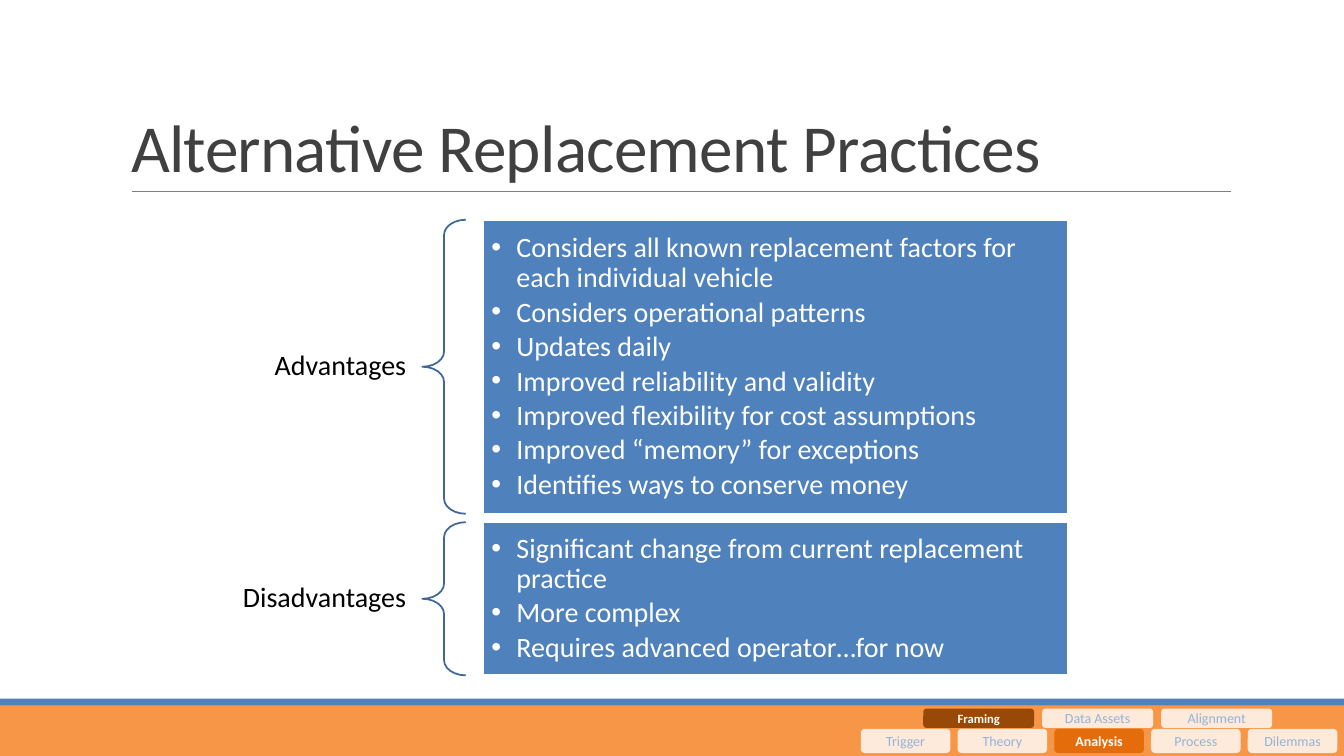
from lxml import etree
from pptx import Presentation
from pptx.dml.color import RGBColor
from pptx.enum.shapes import MSO_CONNECTOR, MSO_SHAPE
from pptx.enum.text import MSO_ANCHOR, MSO_AUTO_SIZE, PP_ALIGN
from pptx.oxml.ns import qn
from pptx.util import Pt

RECT, ROUND, BRACE = MSO_SHAPE.RECTANGLE, MSO_SHAPE.ROUNDED_RECTANGLE, MSO_SHAPE.LEFT_BRACE
LEFT, CENTER, RIGHT = PP_ALIGN.LEFT, PP_ALIGN.CENTER, PP_ALIGN.RIGHT
MIDDLE, BOTTOM = MSO_ANCHOR.MIDDLE, MSO_ANCHOR.BOTTOM
NO_FIT = MSO_AUTO_SIZE.NONE
STRAIGHT = MSO_CONNECTOR.STRAIGHT

BLUE, WHITE, BLACK = "4F81BD", "FFFFFF", "000000"
PALE, FADED = "FDEADA", "95B3D7"

PANELS = [
    ("Advantages", 157, 210, [
        "Considers all known replacement factors for each individual vehicle",
        "Considers operational patterns",
        "Updates daily",
        "Improved reliability and validity",
        "Improved flexibility for cost assumptions",
        "Improved “memory” for exceptions",
        "Identifies ways to conserve money",
    ]),
    ("Disadvantages", 373, 109.4, [
        "Significant change from current replacement practice",
        "More complex",
        "Requires advanced operator…for now",
    ]),
]
# names, left, top, step, width, height
ROWS = [
    (["Framing", "Data Assets", "Alignment"], 659.5, 506.2, 85, 79.2, 13.7),
    (["Trigger", "Theory", "Analysis", "Process", "Dilemmas"], 614.9, 520.6, 69.1, 64, 17.3),
]
# fill and text size of the highlighted tabs
ACTIVE = {"Framing": ("984807", 9), "Analysis": ("E46C0A", 10)}


def color(code):
    return RGBColor.from_string(code)


def place(shape, x, y, w, h):
    shape.left, shape.top, shape.width, shape.height = Pt(x), Pt(y), Pt(w), Pt(h)


def write(shape, *lines, size=20, ink=BLACK, bold=False, align=LEFT, anchor=MIDDLE,
          inset=(6, 6), lead=1, after=0, hang=0, track=0):
    """Fill a shape with one paragraph per line; inset is (sides, top and bottom)."""
    frame = shape.text_frame
    frame.text = "\n".join(lines)
    frame.word_wrap = True
    frame.auto_size = NO_FIT
    frame.vertical_anchor = anchor
    frame.margin_left = frame.margin_right = Pt(inset[0])
    frame.margin_top = frame.margin_bottom = Pt(inset[1])
    for para in frame.paragraphs:
        para.alignment = align
        para.line_spacing = lead
        para.space_before, para.space_after = Pt(0), Pt(after)
        if hang:
            props = para._p.get_or_add_pPr()
            props.set("marL", str(Pt(hang)))
            props.set("indent", str(-Pt(hang)))
            etree.SubElement(props, qn("a:buChar"), char="•")
        for run in para.runs:
            font = run.font
            font.name, font.size, font.bold = "Calibri", Pt(size), bold
            font.color.rgb = color(ink)
            if track:
                run._r.get_or_add_rPr().set("spc", str(track))


class Deck:
    def __init__(self):
        self.file = Presentation()
        self.file.slide_width, self.file.slide_height = Pt(960), Pt(540)
        self.slide = self.file.slides.add_slide(self.file.slide_layouts[3])
        self.shapes = self.slide.shapes

    def paint(self, shape, fill=None, line=None):
        if fill:
            shape.fill.solid()
            shape.fill.fore_color.rgb = color(fill)
        else:
            shape.fill.background()
        if line:
            shape.line.color.rgb = color(line)
            shape.line.width = Pt(1.25)
        else:
            shape.line.fill.background()

    def shape(self, kind, x, y, w, h, fill=None, line=None):
        item = self.shapes.add_shape(kind, Pt(x), Pt(y), Pt(w), Pt(h))
        item.shadow.inherit = False
        self.paint(item, fill, line)
        return item

    def rule(self, x, y, end):
        line = self.shapes.add_connector(STRAIGHT, Pt(x), Pt(y), Pt(end), Pt(y))
        line.line.color.rgb = color("808080")
        line.line.width = Pt(0.5)
        etree.SubElement(line._element.spPr, qn("a:effectLst"))

    def title(self, text):
        place(self.shapes.title, 86.4, 22.3, 792, 114.5)
        write(self.shapes.title, text, size=48, ink="404040", anchor=BOTTOM,
              inset=(7.2, 3.6), lead=0.85, track=-50)

    def panel(self, slot, name, y, h, items):
        """Label, brace and bulleted list side by side."""
        label = self.shapes.add_textbox(Pt(148.3), Pt(y + h / 2 - 15.5), Pt(153.4), Pt(31))
        write(label, name, align=RIGHT, inset=(11.5, 4.3), lead=0.9)
        brace = self.shape(BRACE, 301.7, y, 31, h, line="3F6797")
        brace.adjustments[0] = 0.35
        body = self.slide.placeholders[slot]
        place(body, 344.9, y, 417.6, h)
        self.paint(body, BLUE, WHITE)
        write(body, *items, ink=WHITE, lead=0.9, after=3, hang=18)

    def tab(self, name, x, y, w, h):
        fill, size = ACTIVE.get(name, (PALE, 10))
        live = name in ACTIVE
        write(self.shape(ROUND, x, y, w, h, fill), name, size=size, bold=live,
              ink=WHITE if live else FADED, align=CENTER, inset=(6.5, 2.9))


def main():
    deck = Deck()
    deck.shape(RECT, 0, 504, 960, 36, "F79646")
    deck.shape(RECT, 0, 499, 960, 5, BLUE)
    deck.rule(94.3, 136.8, 879.1)
    deck.title("Alternative Replacement Practices")
    for slot, panel in enumerate(PANELS, 1):
        deck.panel(slot, *panel)
    for names, x, y, step, w, h in ROWS:
        for i, name in enumerate(names):
            deck.tab(name, x + i * step, y, w, h)
    deck.file.save("out.pptx")


if __name__ == "__main__":
    main()
